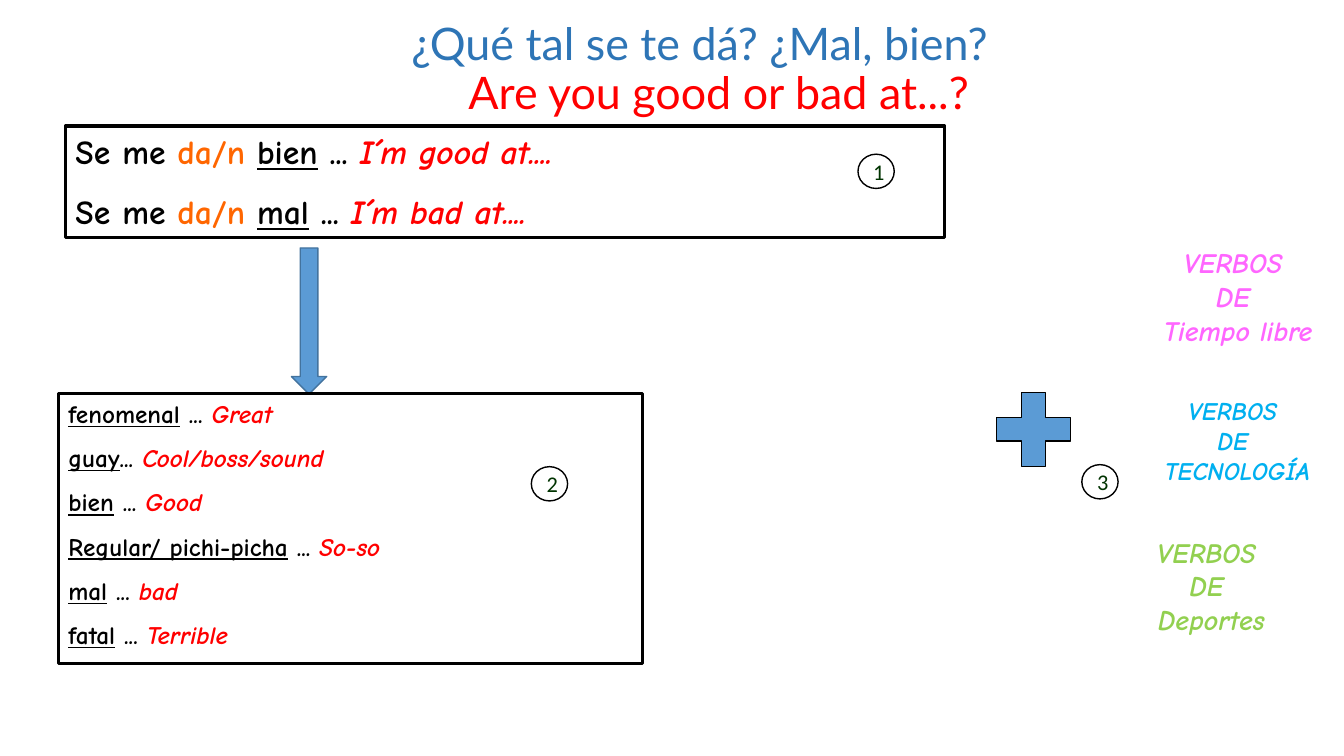
import pptx
import pptx.dml.color
import pptx.enum.shapes
import pptx.enum.text
import pptx.util

SHAPE = pptx.enum.shapes.MSO_SHAPE
ALIGN = pptx.enum.text.PP_ALIGN
ANCHOR = pptx.enum.text.MSO_ANCHOR
PX = 9144
BLACK, RED, ORANGE, BLUE = "000000", "FF0000", "FF6600", "5B9BD5"

STARTERS = [("bien", "I´m good at...."), ("mal", "I´m bad at....")]
OPINIONS = [
    ("fenomenal", " ... ", "Great"),
    ("guay", "... ", "Cool/boss/sound"),
    ("bien", " ... ", "Good"),
    ("Regular/ pichi-picha", " ... ", "So-so"),
    ("mal", " ... ", "bad"),
    ("fatal", " ... ", "Terrible"),
]
VERB_GROUPS = [
    ((1045, 239, 366, 111), "Tiempo libre", 20, "FF66FF"),
    ((1121, 387, 212, 101), "TECNOLOGÍA", 18, "00B0F0"),
    ((969, 526, 465, 111), "Deportes", 20, "92D050"),
]
STEPS = [("1", 851, 153), ("2", 527, 463), ("3", 1073, 461)]


def colour(code):
    """Turn a hex string into a colour."""
    return pptx.dml.color.RGBColor.from_string(code)


def scaled(box):
    """Turn a box in px into EMU lengths."""
    return [pptx.util.Emu(length * PX) for length in box]


def style(span, size, face, code, bold=False, italic=False, underline=False):
    """Format one run of text."""
    font = span.font
    font.size, font.name = pptx.util.Pt(size), face
    font.bold, font.italic, font.underline = bold, italic, underline
    font.color.rgb = colour(code)


def add_outline(page, kind, box, line, weight, fill=None):
    """Draw a preset shape with a line and an optional fill."""
    shape = page.shapes.add_shape(kind, *scaled(box))
    shape.shadow.inherit = False
    if fill:
        shape.fill.solid()
        shape.fill.fore_color.rgb = colour(fill)
    else:
        shape.fill.background()
    shape.line.color.rgb = colour(line)
    shape.line.width = pptx.util.Pt(weight)
    return shape


def add_title(page, box):
    """Place the two-line question in the title placeholder."""
    title = page.shapes.title
    title.left, title.top, title.width, title.height = scaled(box)
    frame = title.text_frame
    frame.text = "¿Qué tal se te dá? ¿Mal, bien?\vAre you good or bad at...?"
    frame.vertical_anchor = ANCHOR.BOTTOM
    frame.auto_size = pptx.enum.text.MSO_AUTO_SIZE.NONE
    para = frame.paragraphs[0]
    para.alignment, para.line_spacing = ALIGN.CENTER, 0.9
    properties = para._p.get_or_add_pPr()
    properties.set("marL", str(38 * PX))
    properties.set("indent", str(-38 * PX))
    for span, code in zip(para.runs, ("2E75B6", RED)):
        style(span, 32, "Lato", code)


def add_phrases(page, box, phrases, size, gap):
    """Frame a list of phrases, each made of (text, colour, underline, italic)."""
    frame = add_outline(page, SHAPE.RECTANGLE, box, BLACK, 2.25).text_frame
    frame.word_wrap = True
    frame.vertical_anchor = ANCHOR.TOP
    for index, phrase in enumerate(phrases):
        para = frame.add_paragraph() if index else frame.paragraphs[0]
        para.alignment = ALIGN.LEFT
        para.space_before = pptx.util.Pt(gap if index else 0)
        for text, code, underline, italic in phrase:
            span = para.add_run()
            span.text = text
            style(span, size, "Comic Neue", code, True, italic, underline)


def phrase_end(spanish, dots, english):
    """Give the underlined Spanish word, the dots and the English meaning."""
    return [(spanish, BLACK, True, False), (dots, BLACK, False, False),
            (english, RED, False, True)]


def add_verb_group(page, box, topic, size, code):
    """Write one centred verb heading over three lines."""
    frame = page.shapes.add_textbox(*scaled(box)).text_frame
    frame.word_wrap = True
    frame.text = f"VERBOS \nDE \n{topic}"
    for para in frame.paragraphs:
        para.alignment = ALIGN.CENTER
        style(para.runs[0], size, "Comic Neue", code, True, True)


def add_step(page, number, left, top):
    """Draw a circled step number."""
    circle = add_outline(page, SHAPE.OVAL, (left, top, 36, 34), BLACK, 1)
    frame = circle.text_frame
    frame.text = number
    frame.word_wrap = True
    frame.vertical_anchor = ANCHOR.MIDDLE
    para = frame.paragraphs[0]
    para.alignment = ALIGN.CENTER
    style(para.runs[0], 16, "Calibri", "003300")


def main():
    """Build the slide and save it."""
    deck = pptx.Presentation()
    deck.slide_width, deck.slide_height = scaled((1333, 750))
    page = deck.slides.add_slide(deck.slide_layouts[5])
    add_title(page, (244, 28, 900, 95))
    starters = [
        [("Se me ", BLACK, False, False), ("da/n ", ORANGE, False, False)]
        + phrase_end(spanish, " ... ", english)
        for spanish, english in STARTERS
    ]
    add_phrases(page, (65, 125, 872, 111), starters, 24, 14)
    add_outline(page, SHAPE.MATH_PLUS, (975, 376, 100, 100), BLACK, 1, BLUE)
    add_outline(page, SHAPE.DOWN_ARROW, (289, 246, 35, 145), "43739E", 1, BLUE)
    opinions = [phrase_end(*opinion) for opinion in OPINIONS]
    add_phrases(page, (58, 390, 579, 268), opinions, 18, 10)
    for group in VERB_GROUPS:
        add_verb_group(page, *group)
    for step in STEPS:
        add_step(page, *step)
    deck.save("out.pptx")


if __name__ == "__main__":
    main()
